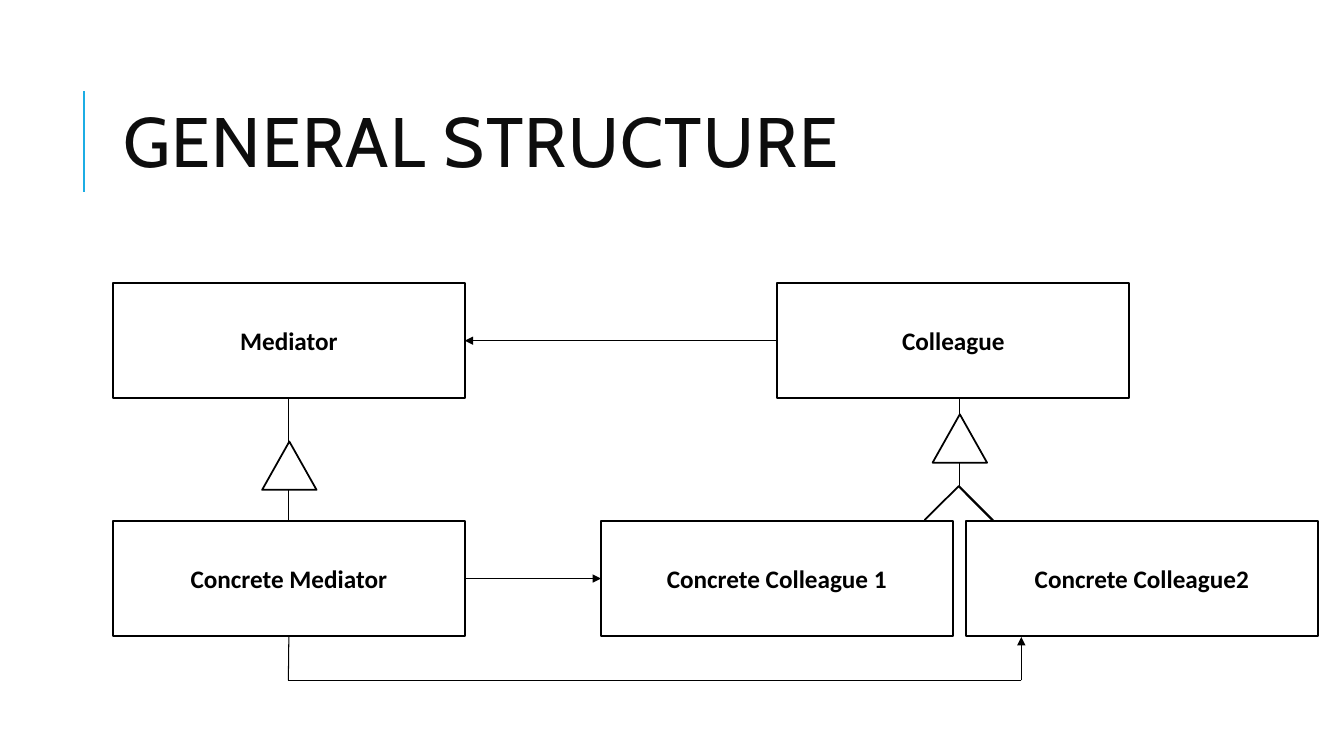
import pptx
import pptx.util
import pptx.dml.color
import pptx.enum.shapes
import pptx.enum.text
import pptx.oxml
import pptx.oxml.ns
from dataclasses import dataclass

Inches = pptx.util.Inches
Pt = pptx.util.Pt
Shapes = pptx.enum.shapes.MSO_SHAPE
Align = pptx.enum.text.PP_ALIGN
Anchor = pptx.enum.text.MSO_ANCHOR
TOP, LEFT, BOTTOM, RIGHT = range(4)


@dataclass(frozen=True)
class Theme:
    ink: str = "000000"
    paper: str = "FFFFFF"
    title_ink: str = "0D0D0D"
    accent: str = "1CADE4"
    title_font: str = "Cabin"
    body_font: str = "Calibri"
    title_size: float = 50
    body_size: float = 18
    outline: float = 1.25
    link: float = 0.75
    accent_width: float = 1.5


def rgb(value):
    return pptx.dml.color.RGBColor.from_string(value)


def write_text(shape, text, font, size, color, bold=False,
               align=Align.LEFT, line_spacing=None, tracking=None):
    frame = shape.text_frame
    frame.word_wrap = True
    frame.auto_size = pptx.enum.text.MSO_AUTO_SIZE.NONE
    frame.vertical_anchor = Anchor.MIDDLE
    paragraph = frame.paragraphs[0]
    paragraph.alignment = align
    if line_spacing:
        paragraph.line_spacing = line_spacing
    run = paragraph.add_run()
    run.text = text
    run.font.name = font
    run.font.size = Pt(size)
    run.font.bold = bold
    run.font.color.rgb = rgb(color)
    if tracking:
        run.font._element.set("spc", str(int(tracking * 100)))


class DiagramSlide:
    def __init__(self, presentation, theme):
        self.theme = theme
        self.slide = presentation.slides.add_slide(presentation.slide_layouts[5])
        self.slide.background.fill.solid()
        self.slide.background.fill.fore_color.rgb = rgb(theme.paper)

    def title(self, text, left, top, width, height):
        shape = self.slide.shapes.title
        shape.left, shape.top = Inches(left), Inches(top)
        shape.width, shape.height = Inches(width), Inches(height)
        write_text(shape, text, self.theme.title_font, self.theme.title_size,
                   self.theme.title_ink, line_spacing=0.8, tracking=1)

    def shape(self, kind, left, top, width, height, fill=None):
        shape = self.slide.shapes.add_shape(
            kind, Inches(left), Inches(top), Inches(width), Inches(height))
        shape.shadow.inherit = False
        shape.fill.solid()
        shape.fill.fore_color.rgb = rgb(fill or self.theme.paper)
        shape.line.color.rgb = rgb(self.theme.ink)
        shape.line.width = Pt(self.theme.outline)
        return shape

    def box(self, text, left, top):
        shape = self.shape(Shapes.RECTANGLE, left, top, 3.49, 1.14)
        write_text(shape, text, self.theme.body_font, self.theme.body_size,
                   self.theme.ink, bold=True, align=Align.CENTER)
        return shape

    def triangle(self, left, top):
        return self.shape(Shapes.ISOSCELES_TRIANGLE, left, top, 0.54, 0.48)

    def fork(self, left, top, size):
        shape = self.shape(Shapes.HALF_FRAME, left, top, size, size, self.theme.ink)
        shape.adjustments[0] = 0.011
        shape.adjustments[1] = 0
        shape.rotation = 45.1

    def line(self, start, end, arrow=False, color=None, width=None,
             begin_at=None, end_at=None):
        connector = self.slide.shapes.add_connector(
            pptx.enum.shapes.MSO_CONNECTOR.STRAIGHT,
            *(Inches(value) for value in (*start, *end)))
        connector.line.color.rgb = rgb(color or self.theme.ink)
        connector.line.width = Pt(width or self.theme.link)
        if begin_at:
            connector.begin_connect(*begin_at)
        if end_at:
            connector.end_connect(*end_at)
        if arrow:
            tail = pptx.oxml.parse_xml(
                f'<a:tailEnd {pptx.oxml.ns.nsdecls("a")} type="triangle"/>')
            connector.line._get_or_add_ln().append(tail)
        connector._element.spPr.append(
            pptx.oxml.parse_xml(f'<a:effectLst {pptx.oxml.ns.nsdecls("a")}/>'))


def main():
    presentation = pptx.Presentation()
    presentation.slide_width = Inches(13.33)
    presentation.slide_height = Inches(7.5)
    theme = Theme()
    diagram = DiagramSlide(presentation, theme)

    # Title with accent rule
    diagram.line((0.83, 1.9), (0.83, 0.9), color=theme.accent,
                 width=theme.accent_width)
    diagram.title("GENERAL STRUCTURE", 1.12, 0.64, 10.63, 1.64)

    # Class boxes
    upper, lower = 2.81, 5.17
    mediator = diagram.box("Mediator", 1.12, upper)
    concrete_mediator = diagram.box("Concrete Mediator", 1.12, lower)
    colleague = diagram.box("Colleague", 7.71, upper)
    first_colleague = diagram.box("Concrete Colleague 1", 5.96, lower)
    diagram.box("Concrete Colleague2", 9.58, lower)

    # Mediator inheritance
    diagram.line((2.86, 3.95), (2.86, lower), begin_at=(mediator, BOTTOM),
                 end_at=(concrete_mediator, TOP))
    diagram.triangle(2.6, 4.38)

    # References between classes
    diagram.line((7.71, 3.38), (4.61, 3.38), arrow=True,
                 begin_at=(colleague, LEFT), end_at=(mediator, RIGHT))
    diagram.line((4.61, 5.74), (5.96, 5.74), arrow=True,
                 begin_at=(concrete_mediator, RIGHT),
                 end_at=(first_colleague, LEFT))

    # Route below the boxes to the second colleague
    diagram.line((10.13, 6.75), (10.13, 6.32), arrow=True)
    diagram.line((10.13, 6.75), (2.86, 6.75))
    diagram.line((2.86, 6.31), (2.86, 6.75), begin_at=(concrete_mediator, BOTTOM))

    # Colleague inheritance
    diagram.fork(9.27, 4.92, 0.48)
    diagram.line((9.52, 4.82), (9.52, 3.95))
    diagram.triangle(9.25, 4.11)

    presentation.save("out.pptx")


if __name__ == "__main__":
    main()
